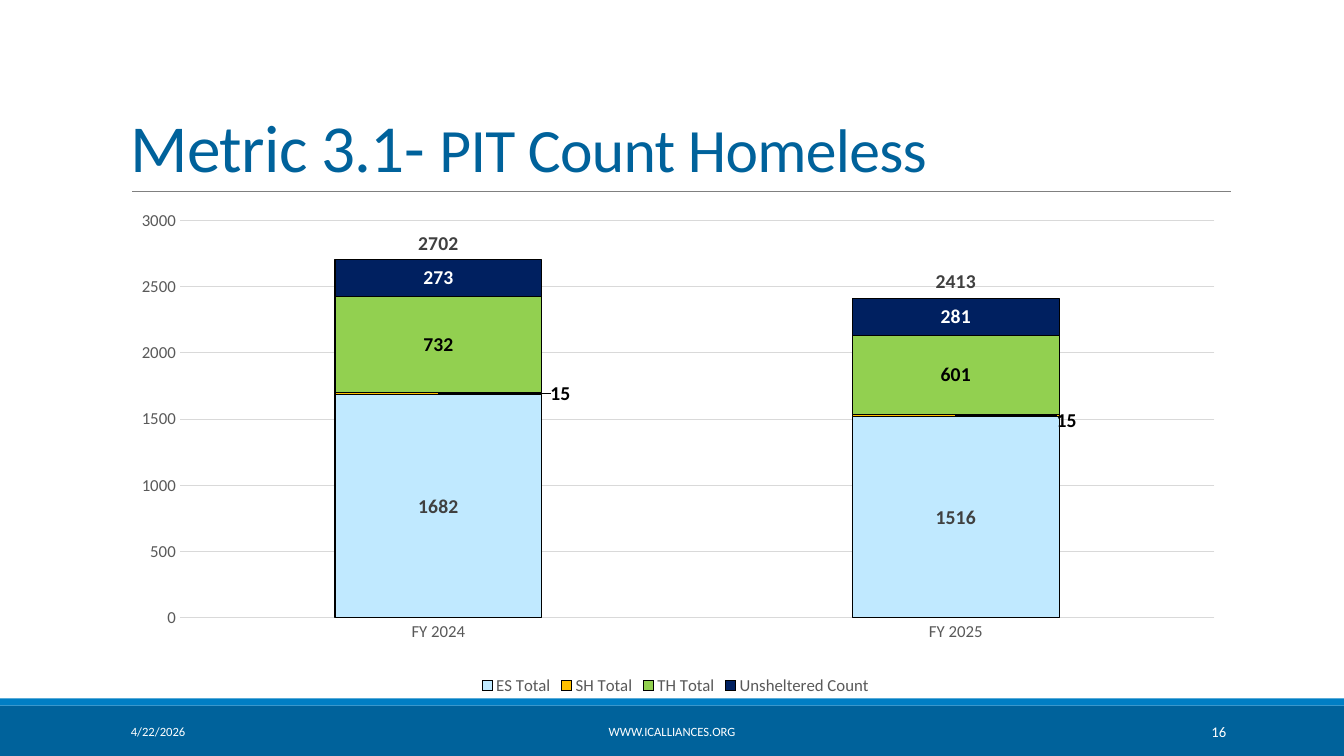
"""Build the PIT count slide: a stacked column chart with totals."""
from copy import deepcopy
from dataclasses import dataclass

from lxml.etree import SubElement
from pptx import Presentation
from pptx.chart.data import CategoryChartData
from pptx.dml.color import RGBColor
from pptx.enum.chart import XL_CHART_TYPE as ChartType
from pptx.enum.chart import XL_LABEL_POSITION as LabelPos
from pptx.enum.chart import XL_LEGEND_POSITION as LegendPos
from pptx.enum.chart import XL_TICK_MARK as Tick
from pptx.enum.shapes import MSO_CONNECTOR as Connector
from pptx.enum.shapes import MSO_SHAPE as Shape
from pptx.enum.text import MSO_ANCHOR as Anchor
from pptx.enum.text import PP_ALIGN as Align
from pptx.oxml import parse_xml
from pptx.oxml.ns import nsdecls, qn
from pptx.util import Inches, Pt


@dataclass(frozen=True)
class Theme:
    font: str = "Calibri"
    blue: str = "00629B"
    bright: str = "007EC4"
    white: str = "FFFFFF"
    black: str = "000000"
    rule: str = "808080"
    grid: str = "D9D9D9"
    muted: str = "595959"
    dark: str = "404040"
    title: float = 48
    subtitle: float = 44
    label: float = 14
    axis: float = 12
    footer: float = 9
    number: float = 10.5


T = Theme()
YEARS = ["FY 2024", "FY 2025"]
COUNTS = [
    ("ES Total", (1682, 1516), "C0E9FF", T.dark),
    ("SH Total", (15, 15), "FFC000", T.black),
    ("TH Total", (732, 601), "92D050", T.black),
    ("Unsheltered Count", (273, 281), "002060", T.white),
]
SH_LABEL_SHIFTS = [(0.11, 0), (0.1, 0.01)]


def style_font(font, size, color, bold=False):
    font.name, font.size, font.bold = T.font, Pt(size), bold
    font.color.rgb = RGBColor.from_string(color)


def style_line(line, color, width):
    line.color.rgb = RGBColor.from_string(color)
    line.width = Pt(width)


def add_band(s, top, height, color):
    sp = s.shapes.add_shape(Shape.RECTANGLE, 0, Inches(top), Inches(13.33), Inches(height))
    sp.shadow.inherit = False
    sp.fill.solid()
    sp.fill.fore_color.rgb = RGBColor.from_string(color)
    sp.line.fill.background()


def add_rule(s, left, right, y):
    line = s.shapes.add_connector(
        Connector.STRAIGHT, Inches(left), Inches(y), Inches(right), Inches(y))
    style_line(line.line, T.rule, 0.5)
    SubElement(line._element.spPr, qn("a:effectLst"))


def add_text_box(s, box, anchor):
    tf = s.shapes.add_textbox(*map(Inches, box)).text_frame
    tf.word_wrap = True
    tf.vertical_anchor = anchor
    return tf.paragraphs[0]


def add_title(s):
    p = add_text_box(s, (1.2, 0.31, 11, 1.59), Anchor.BOTTOM)
    p.line_spacing = 0.85
    for text, size in (("Metric 3.1- ", T.title), ("PIT Count Homeless", T.subtitle)):
        r = p.add_run()
        r.text = text
        style_font(r.font, size, T.blue)
        r._r.get_or_add_rPr().set("spc", "-50")


def add_footer(s, text, left, width, align, size=T.footer):
    p = add_text_box(s, (left, 7.06, width, 0.4), Anchor.MIDDLE)
    p.text = text
    p.alignment = align
    style_font(p.font, size, T.white)


def remove_children(parent, tag):
    for child in parent.findall(qn(tag)):
        parent.remove(child)


def manual_layout(**values):
    items = "".join(f'<c:{tag} val="{val}"/>' for tag, val in values.items())
    return parse_xml(f'<c:layout {nsdecls("c")}><c:manualLayout>{items}'
                     "</c:manualLayout></c:layout>")


def style_labels(series, color):
    labels = series.data_labels
    labels.show_value = True
    style_font(labels.font, T.label, color, bold=True)
    return labels


def shift_labels(series, shifts, color):
    for i, (x, y) in enumerate(shifts):
        font = series.points[i].data_label.font
        style_font(font, T.label, color, bold=True)
        label = series._element.xpath(f'c:dLbls/c:dLbl[c:idx/@val="{i}"]')[0]
        label.insert(1, manual_layout(x=x, y=y))


def move_to_line(chart, series):
    """Turn a column series into an unseen line that carries the totals."""
    bars, ser = chart.plots[0]._element, series._element
    remove_children(ser, "c:invertIfNegative")
    ser.find(qn("c:spPr")).addnext(
        parse_xml(f'<c:marker {nsdecls("c")}><c:symbol val="none"/></c:marker>'))
    SubElement(ser, qn("c:smooth")).set("val", "0")
    line = parse_xml(f'<c:lineChart {nsdecls("c")}><c:grouping val="standard"/>'
                     '<c:varyColors val="0"/></c:lineChart>')
    line.append(ser)
    SubElement(line, qn("c:marker")).set("val", "1")
    for axis_id in bars.findall(qn("c:axId")):
        line.append(deepcopy(axis_id))
    bars.addnext(line)


def style_axes(chart):
    for axis in (chart.category_axis, chart.value_axis):
        axis.major_tick_mark = axis.minor_tick_mark = Tick.NONE
        style_font(axis.tick_labels.font, T.axis, T.muted)
    style_line(chart.category_axis.format.line, T.grid, 0.75)
    values = chart.value_axis
    values.minimum_scale, values.maximum_scale, values.major_unit = 0, 3000, 500
    values.format.line.fill.background()
    style_line(values.major_gridlines.format.line, T.grid, 0.75)


def style_legend(chart, hidden):
    chart.has_legend = True
    legend = chart.legend
    legend.position = LegendPos.BOTTOM
    legend.include_in_layout = False
    style_font(legend.font, T.axis, T.muted)
    legend._element.insert(1, parse_xml(
        f'<c:legendEntry {nsdecls("c")}><c:idx val="{hidden}"/>'
        '<c:delete val="1"/></c:legendEntry>'))


def add_count_chart(s):
    data = CategoryChartData()
    data.categories = YEARS
    for name, values, *_ in COUNTS:
        data.add_series(name, values)
    data.add_series("Series 5", [sum(year) for year in zip(*(c[1] for c in COUNTS))])
    chart = s.shapes.add_chart(
        ChartType.COLUMN_STACKED, *map(Inches, (1.2, 1.9, 11, 5.04)), data).chart
    chart.has_title = False
    style_font(chart.font, 10, T.black)
    plot = chart.plots[0]
    plot.gap_width, plot.overlap, plot.vary_by_categories = 150, 100, False

    *columns, totals = plot.series
    for series, (_, _, fill, text) in zip(columns, COUNTS):
        series.format.fill.solid()
        series.format.fill.fore_color.rgb = RGBColor.from_string(fill)
        style_line(series.format.line, T.black, 0.75)
        style_labels(series, text)
    shift_labels(columns[1], SH_LABEL_SHIFTS, T.black)
    totals.format.line.fill.background()
    style_labels(totals, T.dark).position = LabelPos.ABOVE
    move_to_line(chart, totals)

    style_axes(chart)
    style_legend(chart, hidden=len(COUNTS))
    area = chart._chartSpace.chart.plotArea
    remove_children(area, "c:layout")
    area.insert(0, manual_layout(layoutTarget="inner", xMode="edge", yMode="edge",
                                 x=0.053, y=0.057, w=0.933, h=0.782))


def main():
    prs = Presentation()
    prs.slide_width, prs.slide_height = Inches(13.33), Inches(7.5)
    s = prs.slides.add_slide(prs.slide_layouts[6])
    add_band(s, 7, 0.5, T.blue)
    add_band(s, 6.93, 0.07, T.bright)
    add_rule(s, 1.31, 12.21, 1.9)
    add_title(s)
    add_count_chart(s)
    add_footer(s, "4/22/2026", 1.2, 2.7, Align.LEFT)
    add_footer(s, "WWW.ICALLIANCES.ORG", 4.03, 5.27, Align.CENTER)
    add_footer(s, "16", 10.83, 1.43, Align.RIGHT, T.number)
    prs.save("out.pptx")


if __name__ == "__main__":
    main()
